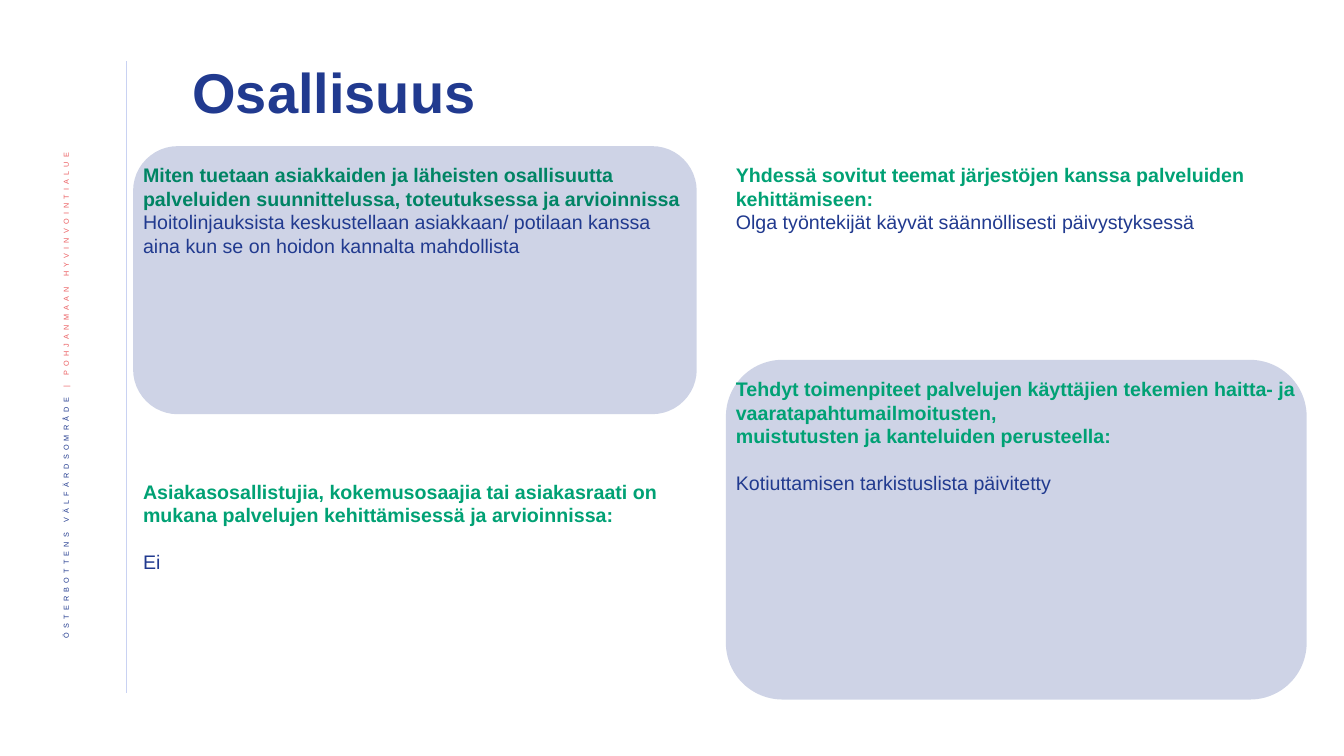
from lxml.etree import SubElement
from pptx import Presentation
from pptx.dml.color import RGBColor
from pptx.enum.shapes import MSO_CONNECTOR, MSO_SHAPE
from pptx.enum.text import MSO_ANCHOR, MSO_AUTO_SIZE, PP_ALIGN
from pptx.oxml.ns import qn
from pptx.util import Inches, Pt

NAVY, GREEN, DARK_GREEN = "213A8F", "00A174", "008464"
CORAL, PALE_BLUE = "EB5C5F", "C9D2F2"
LEFT_COLUMN, RIGHT_COLUMN = (1.32, 5.59), (7.2, 5.76)
PANEL_PADDING = 0.12


def color(hex_string):
    return RGBColor.from_string(hex_string)


def add_run(paragraph, text, size, hex_string, bold=False):
    run = paragraph.add_run()
    run.text = text
    run.font.name = "Arial"
    run.font.size = Pt(size)
    run.font.bold = bold
    run.font.color.rgb = color(hex_string)
    return run


def add_text_frame(slide, box, anchor=MSO_ANCHOR.TOP):
    frame = slide.shapes.add_textbox(*map(Inches, box)).text_frame
    frame.word_wrap = True
    frame.vertical_anchor = anchor
    return frame


def add_sidebar(slide, box):
    left, top, width, height = box
    rule = slide.shapes.add_connector(
        MSO_CONNECTOR.STRAIGHT, Inches(left + width), Inches(top),
        Inches(left + width), Inches(top + height))
    rule.line.color.rgb = color(PALE_BLUE)
    rule.line.width = Pt(0.5)
    SubElement(rule._element.spPr, qn("a:effectLst"))

    frame = add_text_frame(slide, (left, top + 0.81, 0.52, 5.73), MSO_ANCHOR.MIDDLE)
    frame._txBody.bodyPr.set("vert", "vert270")
    paragraph = frame.paragraphs[0]
    paragraph.alignment = PP_ALIGN.RIGHT
    paragraph.line_spacing = 0.9
    for text, hex_string in (("ÖSTERBOTTENS VÄLFÄRDSOMRÅDE ", NAVY),
                             ("| POHJANMAAN HYVINVOINTIALUE", CORAL)):
        properties = add_run(paragraph, text, 9, hex_string).font._element
        properties.set("baseline", "30000")
        properties.set("spc", "300")


def add_title(slide, box, text):
    paragraph = add_text_frame(slide, box, MSO_ANCHOR.MIDDLE).paragraphs[0]
    paragraph.line_spacing = 0.9
    add_run(paragraph, text, 40, NAVY, bold=True)


def add_panel(slide, box):
    panel = slide.shapes.add_shape(MSO_SHAPE.ROUNDED_RECTANGLE, *map(Inches, box))
    panel.shadow.inherit = False
    panel.line.fill.background()
    panel.fill.solid()
    panel.fill.fore_color.rgb = color(NAVY)
    fill_color = panel._element.spPr.find(qn("a:solidFill"))[0]
    SubElement(fill_color, qn("a:alpha")).set("val", "22000")


def add_topic(slide, box, headings, answer, heading_color=GREEN, gap=0, panel_height=0):
    left, top, width, height = box
    if panel_height:
        add_panel(slide, (left, top - PANEL_PADDING, width, panel_height))
    frame = add_text_frame(slide, box)
    frame.auto_size = MSO_AUTO_SIZE.SHAPE_TO_FIT_TEXT
    paragraph = frame.paragraphs[0]
    for heading in headings:
        add_run(paragraph, heading, 14, heading_color, bold=True)
        paragraph = frame.add_paragraph()
    paragraph.space_before = Pt(gap)
    add_run(paragraph, answer, 14, NAVY)


def add_topics(slide, left_column, right_column):
    left, left_width = left_column
    right, right_width = right_column
    add_topic(
        slide, (left, 1.57, left_width, 1.28),
        ["Miten tuetaan asiakkaiden ja läheisten osallisuutta palveluiden "
         "suunnittelussa, toteutuksessa ja arvioinnissa"],
        "Hoitolinjauksista keskustellaan asiakkaan/ potilaan kanssa aina kun "
        "se on hoidon kannalta mahdollista",
        heading_color=DARK_GREEN, panel_height=2.66)
    add_topic(
        slide, (right, 1.57, right_width, 0.81),
        ["Yhdessä sovitut teemat järjestöjen kanssa palveluiden kehittämiseen:"],
        "Olga työntekijät käyvät säännöllisesti päivystyksessä")
    add_topic(
        slide, (left, 4.71, left_width, 1.04),
        ["Asiakasosallistujia, kokemusosaajia tai asiakasraati on mukana "
         "palvelujen kehittämisessä ja arvioinnissa:"],
        "Ei", gap=16.5)
    add_topic(
        slide, (right, 3.69, right_width, 1.75),
        ["Tehdyt toimenpiteet palvelujen käyttäjien tekemien haitta- ja "
         "vaaratapahtumailmoitusten,",
         "muistutusten ja kanteluiden perusteella:"],
        "Kotiuttamisen tarkistuslista päivitetty", gap=16.5, panel_height=3.37)


def main():
    presentation = Presentation()
    presentation.slide_width = Inches(13.33)
    presentation.slide_height = Inches(7.5)
    slide = presentation.slides.add_slide(presentation.slide_layouts[6])
    add_sidebar(slide, (0.42, 0.61, 0.83, 6.27))
    add_title(slide, (1.81, 0.45, 9.98, 0.99), "Osallisuus")
    add_topics(slide, LEFT_COLUMN, RIGHT_COLUMN)
    presentation.save("out.pptx")


if __name__ == "__main__":
    main()
